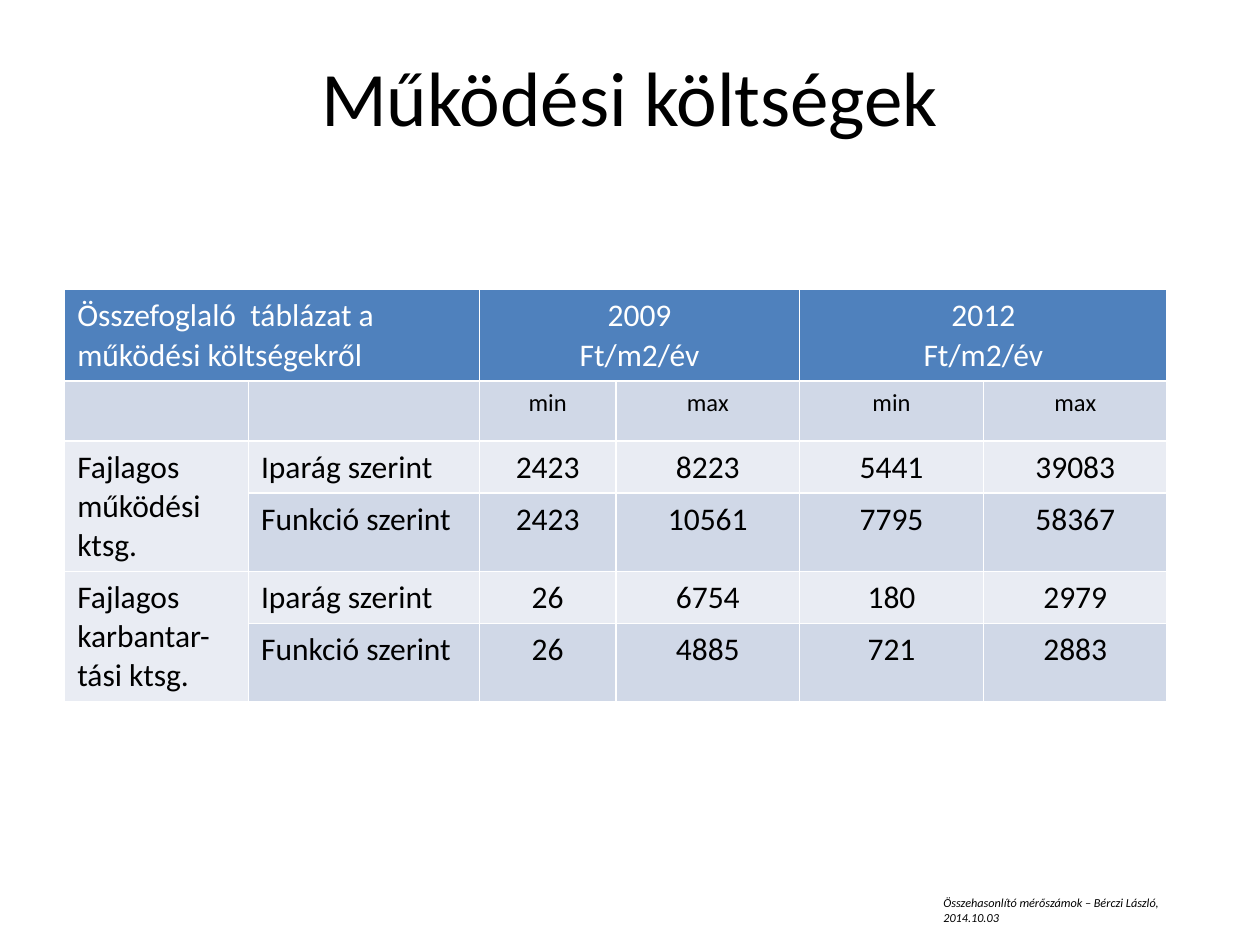
from lxml.etree import SubElement as Sub
from pptx import Presentation
from pptx.dml.color import RGBColor as RGB
from pptx.enum.text import MSO_ANCHOR as Anchor, MSO_AUTO_SIZE as Fit, PP_ALIGN as Align
from pptx.oxml.ns import qn
from pptx.util import Pt

HUES = {"ink": "000000", "white": "FFFFFF", "head": "4F81BD",
        "dark": "D0D8E7", "light": "E9ECF3"}
COLS = [105, 132, 78, 105, 105, 105]
ROWS = [51, 34.5, 29.5, 44, 29.5, 44]
FILLS = ["head", "dark", "light", "dark", "light", "dark"]
CELLS = [
    ["Összefoglaló  táblázat a működési költségekről", "",
     "2009\nFt/m2/év", "", "2012\nFt/m2/év", ""],
    ["", "", "min", "max", "min", "max"],
    ["Fajlagos működési ktsg.", "Iparág szerint", "2423", "8223", "5441", "39083"],
    ["", "Funkció szerint", "2423", "10561", "7795", "58367"],
    ["Fajlagos karbantar-tási ktsg.", "Iparág szerint", "26", "6754", "180", "2979"],
    ["", "Funkció szerint", "26", "4885", "721", "2883"],
]
# First and last cell of each merged area, as (row, column)
SPANS = [((0, c), (0, c + 1)) for c in (0, 2, 4)]
SPANS += [((r, 0), (r + 1, 0)) for r in (2, 4)]


def write(frame, text, size=18, hue="ink", align=Align.LEFT, italic=False, gap=None):
    """Put text in a frame, one paragraph for each line."""
    frame.text = text
    for para in frame.paragraphs:
        para.alignment = align
        if gap:
            para.line_spacing = gap
        for run in para.runs:
            font = run.font
            font.name, font.size = "Calibri", Pt(size)
            font.bold, font.italic = False, italic
            font.color.rgb = RGB.from_string(HUES[hue])


def edge(cell, hue="white", width=0.91):
    """Draw all four borders of a cell."""
    props = cell._tc.get_or_add_tcPr()
    for spot, side in enumerate(("lnL", "lnR", "lnT", "lnB")):
        line = props.makeelement(qn(f"a:{side}"), {"w": str(int(Pt(width)))})
        fill = Sub(line, qn("a:solidFill"))
        Sub(fill, qn("a:srgbClr"), val=HUES[hue])
        props.insert(spot, line)


class Deck:
    def __init__(self):
        self.prs = Presentation()
        self.prs.slide_width, self.prs.slide_height = Pt(720), Pt(540)
        self.slide = self.prs.slides.add_slide(self.prs.slide_layouts[5])

    def title(self, text, x, y, w, h):
        shape = self.slide.shapes.title
        shape.left, shape.top, shape.width, shape.height = map(Pt, (x, y, w, h))
        frame = shape.text_frame
        frame.vertical_anchor = Anchor.TOP
        frame.margin_top = Pt(6.5)
        write(frame, text, size=44, align=Align.CENTER)

    def table(self, x, y):
        size = map(Pt, (x, y, sum(COLS), sum(ROWS)))
        grid = self.slide.shapes.add_table(len(ROWS), len(COLS), *size).table
        grid.first_row = grid.horz_banding = False
        for col, width in zip(grid.columns, COLS):
            col.width = Pt(width)
        for row, height in zip(grid.rows, ROWS):
            row.height = Pt(height)
        for r, line in enumerate(CELLS):
            for c, text in enumerate(line):
                cell = grid.cell(r, c)
                cell.fill.solid()
                cell.fill.fore_color.rgb = RGB.from_string(HUES[FILLS[r]])
                edge(cell)
                write(cell.text_frame, text, size=14 if r == 1 else 18,
                      hue="white" if r == 0 else "ink",
                      align=Align.LEFT if c < 2 else Align.CENTER, gap=1.02)
        for first, last in SPANS:
            grid.cell(*first).merge(grid.cell(*last))

    def note(self, text, x, y, w, h):
        box = self.slide.shapes.add_textbox(*map(Pt, (x, y, w, h)))
        frame = box.text_frame
        frame.word_wrap = True
        frame.auto_size = Fit.SHAPE_TO_FIT_TEXT
        write(frame, text, size=7, italic=True)


def main():
    deck = Deck()
    deck.title("Működési költségek", 36, 21.6, 648, 90)
    deck.table(37, 165.6)
    deck.note("Összehasonlító mérőszámok – Bérczi László, 2014.10.03",
              532, 508.3, 170, 16)
    deck.prs.save("out.pptx")


if __name__ == "__main__":
    main()
